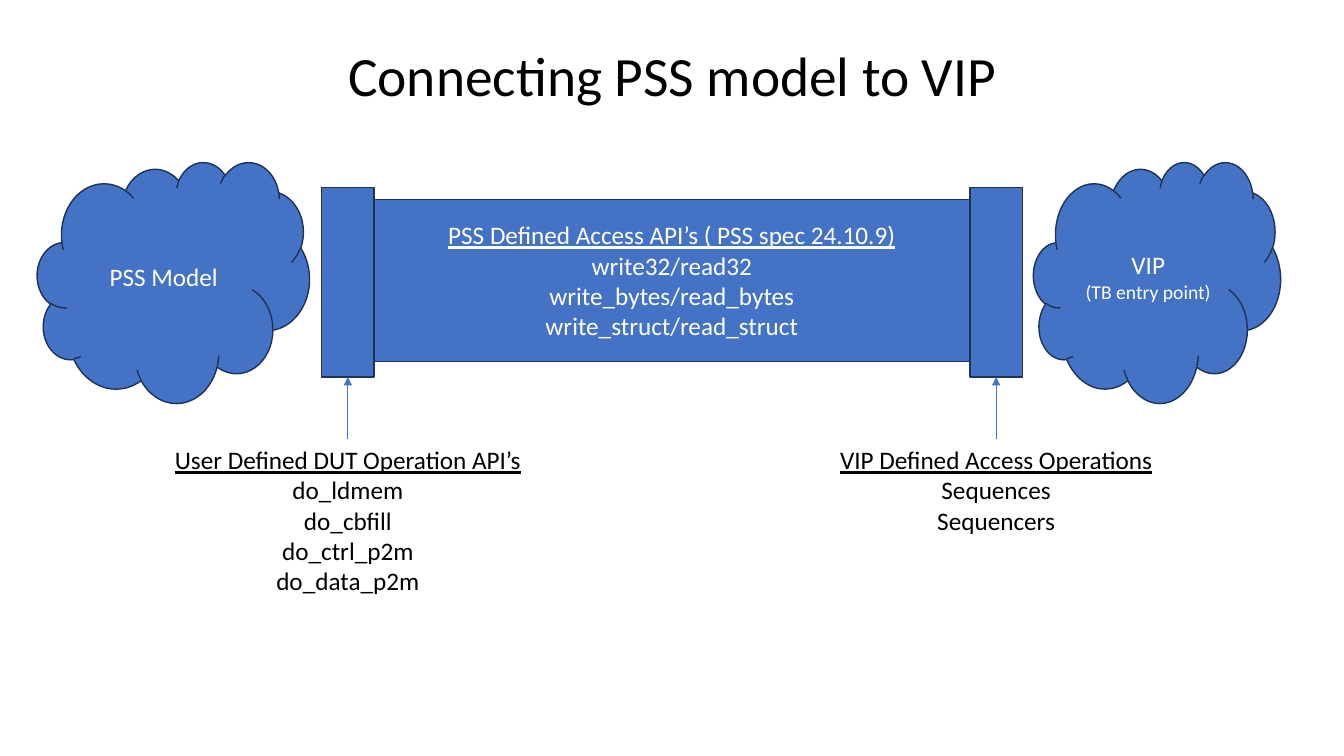
from dataclasses import dataclass

from lxml import etree
from pptx import Presentation
from pptx import util as u
from pptx.dml.color import RGBColor
from pptx.enum import shapes, text
from pptx.oxml import ns


@dataclass(frozen=True)
class Theme:
    """Colours, font and type sizes of the slide."""
    font: str = "Calibri"
    blue: str = "4472C4"
    edge: str = "1E3256"
    white: str = "FFFFFF"
    black: str = "000000"
    title: float = 39.6
    body: float = 18
    small: float = 14


THEME = Theme()
WIDE, HIGH = u.Inches(13.33), u.Inches(7.5)


def place(left, top, width, height):
    """Turn percentages of the slide into lengths."""
    return [u.Emu(round(part * full / 100))
            for part, full in zip((left, top, width, height), (WIDE, HIGH) * 2)]


def rgb(code):
    """Return a colour from its hex code."""
    return RGBColor.from_string(code)


def write(shape, lines, color, sizes=(), head=False, wrap=True):
    """Write centred lines, the first one underlined if it is a heading."""
    frame = shape.text_frame
    frame.word_wrap = wrap
    frame.text = "\n".join(lines)
    for i, para in enumerate(frame.paragraphs):
        para.alignment = text.PP_ALIGN.CENTER
        font = para.font
        font.name = THEME.font
        font.size = u.Pt(sizes[i] if sizes else THEME.body)
        font.color.rgb = rgb(color)
        para.runs[0].font.underline = head and i == 0
    return frame


def block(slide, kind, box, lines=(), sizes=()):
    """Draw a blue preset shape with optional text."""
    shape = slide.shapes.add_shape(kind, *place(*box))
    shape.shadow.inherit = False
    shape.fill.solid()
    shape.fill.fore_color.rgb = rgb(THEME.blue)
    shape.line.color.rgb = rgb(THEME.edge)
    shape.line.width = u.Pt(1)
    if lines:
        frame = write(shape, lines, THEME.white, sizes)
        frame.vertical_anchor = text.MSO_ANCHOR.MIDDLE
    return shape


def label(slide, box, lines, color):
    """Add a text box with an underlined heading."""
    shape = slide.shapes.add_textbox(*place(*box))
    write(shape, lines, color, head=True, wrap=False)
    return shape


def arrow(slide, low, high):
    """Join the top of one shape to the bottom of another."""
    line = slide.shapes.add_connector(shapes.MSO_CONNECTOR.STRAIGHT, 0, 0, 0, 0)
    line.begin_connect(low, 0)
    line.end_connect(high, 2)
    line.line.color.rgb = rgb(THEME.blue)
    line.line.width = u.Pt(0.5)
    tip = etree.SubElement(line.line._get_or_add_ln(), ns.qn("a:tailEnd"))
    tip.set("type", "triangle")
    etree.SubElement(line._element.spPr, ns.qn("a:effectLst"))


def title(slide, words):
    """Add the slide title."""
    shape = slide.shapes.add_textbox(*place(6.9, 5.33, 86.25, 10.13))
    frame = write(shape, [words], THEME.black, [THEME.title])
    frame.vertical_anchor = text.MSO_ANCHOR.MIDDLE
    frame.paragraphs[0].line_spacing = 0.9


def flange(slide, left, width, height, lines):
    """Draw one end of the pipe with its label below."""
    thick = 3.9
    end = block(slide, shapes.MSO_SHAPE.RECTANGLE, (left, 24.8, thick, 25.07))
    start = left + (thick - width) / 2
    note = label(slide, (start, 58.13, width, height), lines, THEME.black)
    arrow(slide, note, end)


def main():
    """Build and save the slide."""
    deck = Presentation()
    deck.slide_width, deck.slide_height = WIDE, HIGH
    slide = deck.slides.add_slide(deck.slide_layouts[6])
    title(slide, "Connecting PSS model to VIP")
    flange(slide, 23.93, 27.53, 21.6, [
        "User Defined DUT Operation API’s", "do_ldmem", "do_cbfill",
        "do_ctrl_p2m", "do_data_p2m"])
    flange(slide, 72.17, 25.2, 13.47, [
        "VIP Defined Access Operations", "Sequences", "Sequencers"])
    block(slide, shapes.MSO_SHAPE.RECTANGLE, (27.83, 26.4, 44.34, 21.4))
    label(slide, (32.4, 28.4, 35.18, 17.47), [
        "PSS Defined Access API’s ( PSS spec 24.10.9)", "write32/read32",
        "write_bytes/read_bytes", "write_struct/read_struct"], THEME.white)
    cloud = shapes.MSO_SHAPE.CLOUD
    block(slide, cloud, (2.78, 21.4, 20.25, 31.87), ["PSS Model"])
    block(slide, cloud, (76.9, 21.4, 18.38, 31.87), ["VIP", "(TB entry point)"],
          [THEME.body, THEME.small])
    deck.save("out.pptx")


if __name__ == "__main__":
    main()
